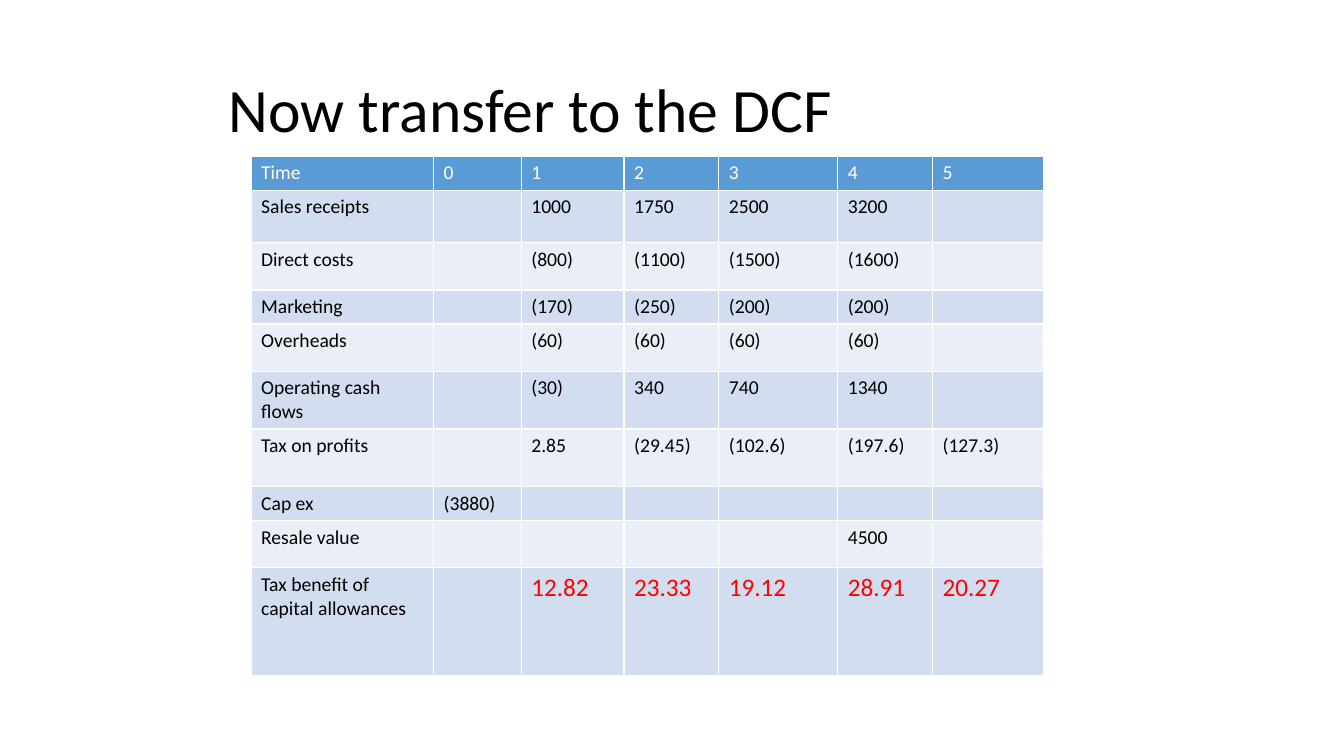
from pptx import Presentation
from pptx import util as u
from pptx.dml.color import RGBColor
from pptx.enum import text

TITLE = "Now transfer to the DCF"
ROWS = [
    ("Time", "0", "1", "2", "3", "4", "5"),
    ("Sales receipts", "", "1000", "1750", "2500", "3200", ""),
    ("Direct costs", "", "(800)", "(1100)", "(1500)", "(1600)", ""),
    ("Marketing", "", "(170)", "(250)", "(200)", "(200)", ""),
    ("Overheads", "", "(60)", "(60)", "(60)", "(60)", ""),
    ("Operating cash flows", "", "(30)", "340", "740", "1340", ""),
    ("Tax on profits", "", "2.85", "(29.45)", "(102.6)", "(197.6)", "(127.3)"),
    ("Cap ex", "(3880)", "", "", "", "", ""),
    ("Resale value", "", "", "", "", "4500", ""),
    ("Tax benefit of capital allowances", "",
     "12.82", "23.33", "19.12", "28.91", "20.27"),
]
COL_WIDTHS = [1.81, 0.87, 1.02, 0.94, 1.18, 0.94, 1.1]
ROW_HEIGHTS = [0.33, 0.52, 0.47, 0.33, 0.47, 0.57, 0.57, 0.33, 0.47, 1.07]
TITLE_BOX = (2.17, 0.68, 9, 0.87)
TABLE_LEFT, TABLE_TOP = 2.49, 1.55

FONT = "Calibri"
BLACK = RGBColor(0x00, 0x00, 0x00)
WHITE = RGBColor(0xFF, 0xFF, 0xFF)
RED = RGBColor(0xFF, 0x00, 0x00)
HEADER_BLUE = RGBColor(0x5B, 0x9B, 0xD5)
BANDS = (RGBColor(0xEA, 0xEF, 0xF7), RGBColor(0xD2, 0xDE, 0xEF))


def write(p, words, size, color):
    r = p.add_run()
    r.text = words
    for name, value in dict(name=FONT, size=u.Pt(size), bold=False).items():
        setattr(r.font, name, value)
    r.font.color.rgb = color


def cell_style(row, col):
    """Return the fill, text size and text colour of a cell."""
    if row == 0:
        return HEADER_BLUE, 14, WHITE
    if row == len(ROWS) - 1 and col > 1:
        return BANDS[row % 2], 18, RED
    return BANDS[row % 2], 14, BLACK


def add_title(slide):
    sp = slide.shapes.title
    sp.left, sp.top, sp.width, sp.height = map(u.Inches, TITLE_BOX)
    tf = sp.text_frame
    tf.vertical_anchor = text.MSO_ANCHOR.MIDDLE
    tf.auto_size = text.MSO_AUTO_SIZE.NONE
    p = tf.paragraphs[0]
    p.alignment = text.PP_ALIGN.LEFT
    p.line_spacing = 0.9
    write(p, TITLE, 44, BLACK)


def add_cash_flow_table(slide):
    box = (TABLE_LEFT, TABLE_TOP, sum(COL_WIDTHS), sum(ROW_HEIGHTS))
    table = slide.shapes.add_table(
        len(ROWS), len(COL_WIDTHS), *map(u.Inches, box)).table
    for column, width in zip(table.columns, COL_WIDTHS):
        column.width = u.Inches(width)
    for row, height in zip(table.rows, ROW_HEIGHTS):
        row.height = u.Inches(height)
    for i, words in enumerate(ROWS):
        for j, word in enumerate(words):
            cell = table.cell(i, j)
            fill, size, color = cell_style(i, j)
            cell.fill.solid()
            cell.fill.fore_color.rgb = fill
            p = cell.text_frame.paragraphs[0]
            if word:
                write(p, word, size, color)
            else:  # keeps an empty cell from stretching its row
                p._p.get_or_add_endParaRPr().set("sz", str(size * 100))


def main():
    prs = Presentation()
    prs.slide_width, prs.slide_height = u.Inches(13.33), u.Inches(7.5)
    slide = prs.slides.add_slide(prs.slide_layouts[5])
    add_title(slide)
    add_cash_flow_table(slide)
    prs.save("out.pptx")


if __name__ == "__main__":
    main()
